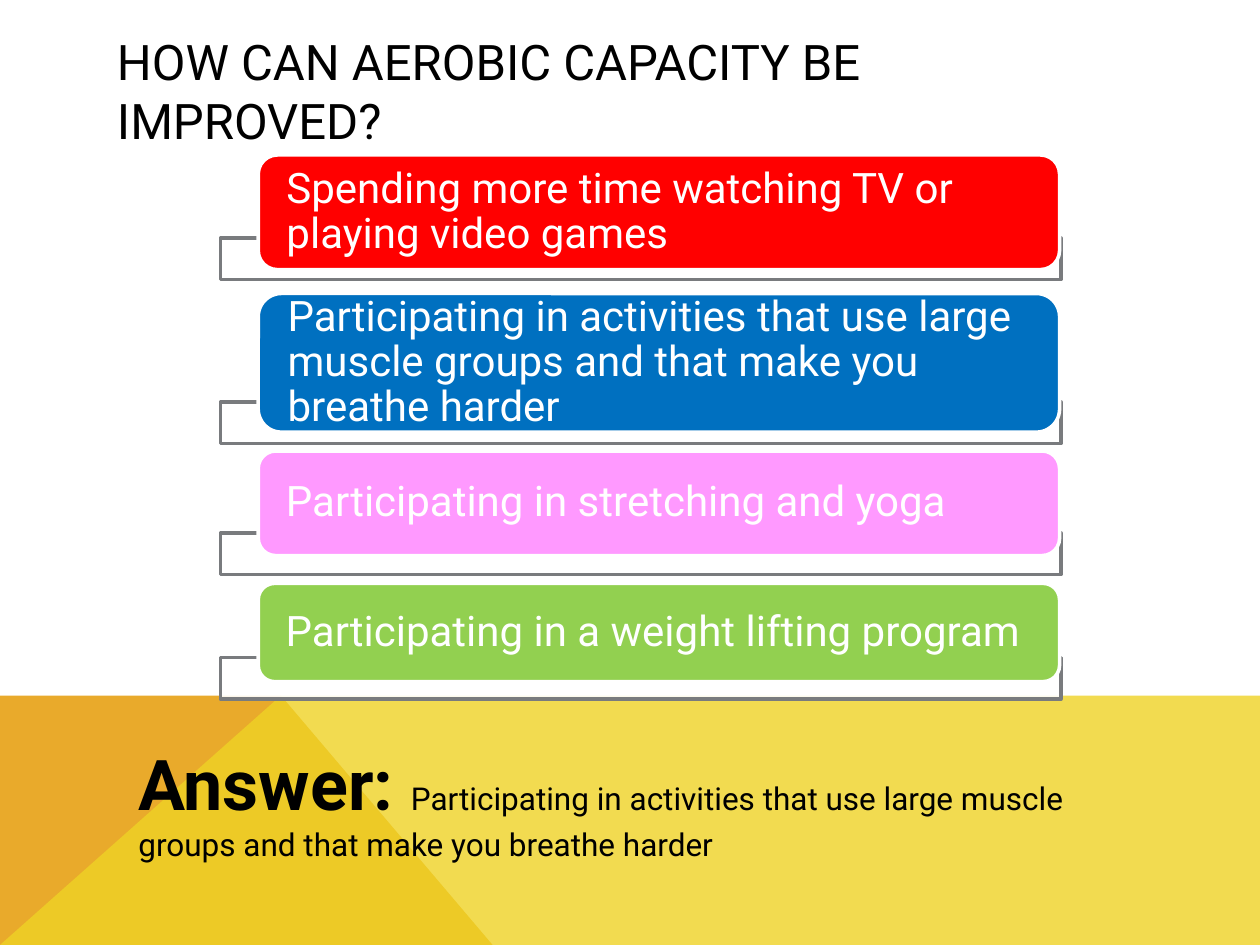
from pptx import Presentation
from pptx.dml.color import RGBColor
from pptx.enum.shapes import MSO_SHAPE
from pptx.enum.text import MSO_ANCHOR
from pptx.oxml.ns import qn
from pptx.util import Inches, Pt
from lxml import etree

RECT = MSO_SHAPE.RECTANGLE
ROUND = MSO_SHAPE.ROUNDED_RECTANGLE
MIDDLE = MSO_ANCHOR.MIDDLE
COLORS = {
    "white": "FFFFFF", "black": "000000", "gray": "797B7E",
    "orange": "E9AA2B", "yellow": "EFD225", "red": "FF0000",
    "blue": "0070C0", "pink": "FF99FF", "green": "92D050",
}


def paint(shape, fill, line=None, alpha=100):
    shape.shadow.inherit = False
    shape.fill.solid()
    shape.fill.fore_color.rgb = RGBColor.from_string(COLORS[fill])
    if alpha < 100:
        color = shape.fill._xPr.find(qn("a:solidFill"))[0]
        etree.SubElement(color, qn("a:alpha"), val=str(alpha * 1000))
    if line:
        shape.line.color.rgb = RGBColor.from_string(COLORS[line])
        shape.line.width = Pt(2)
    else:
        shape.line.fill.background()


def style(run, size, color="black", bold=False):
    run.font.name = "Roboto"
    run.font.size = Pt(size)
    run.font.bold = bold
    run.font.color.rgb = RGBColor.from_string(COLORS[color])


deck = Presentation()
deck.slide_width = Inches(10)
deck.slide_height = Inches(7.5)
slide = deck.slides.add_slide(deck.slide_layouts[6])
shapes = slide.shapes

bands = [
    ([(0, 7.5), (0, 5.52), (2.23, 5.52), (3.91, 7.5)], "orange", 100),
    ([(0, 7.5), (2.23, 5.52), (10, 5.52), (10, 7.5)], "yellow", 80),
]
for points, color, alpha in bands:
    spots = [(Inches(x), Inches(y)) for x, y in points]
    form = shapes.build_freeform(*spots[0])
    form.add_line_segments(spots[1:], close=True)
    paint(form.convert_to_shape(), color, alpha=alpha)

title = shapes.add_textbox(Inches(0.83), Inches(0.42), Inches(8.22), Inches(0.6))
frame = title.text_frame
frame.word_wrap = True
frame.vertical_anchor = MIDDLE
frame.text = "HOW CAN AEROBIC CAPACITY BE IMPROVED?"
style(frame.paragraphs[0].runs[0], 28)

choices = [
    (1.23, 0.91, 1.89, "red", "Spending more time watching TV or playing video games"),
    (2.33, 1.1, 3.19, "blue",
     "Participating in activities that use large muscle groups and that make you breathe harder"),
    (3.58, 0.83, 4.23, "pink", "Participating in stretching and yoga"),
    (4.63, 0.78, 5.22, "green", "Participating in a weight lifting program"),
]
for top, height, base, color, text in choices:
    tray = shapes.add_shape(RECT, Inches(1.75), Inches(base), Inches(6.67), Inches(0.33))
    paint(tray, "white", "gray", 90)
    card = shapes.add_shape(ROUND, Inches(2.05), Inches(top), Inches(6.36), Inches(height))
    paint(card, color, "white")
    frame = card.text_frame
    frame.word_wrap = True
    frame.vertical_anchor = MIDDLE
    frame.margin_left = frame.margin_right = Inches(0.18)
    frame.margin_top = frame.margin_bottom = 0
    frame.text = text
    para = frame.paragraphs[0]
    para.alignment = 1
    para.line_spacing = 0.9
    style(para.runs[0], 24, "white")

answer = shapes.add_textbox(Inches(1), Inches(5.83), Inches(7.58), Inches(1.38))
frame = answer.text_frame
frame.word_wrap = True
para = frame.paragraphs[0]
for text, size, bold in [("Answer: ", 40, True), (choices[1][4], 18, False)]:
    run = para.add_run()
    run.text = text
    style(run, size, bold=bold)

deck.save("out.pptx")
